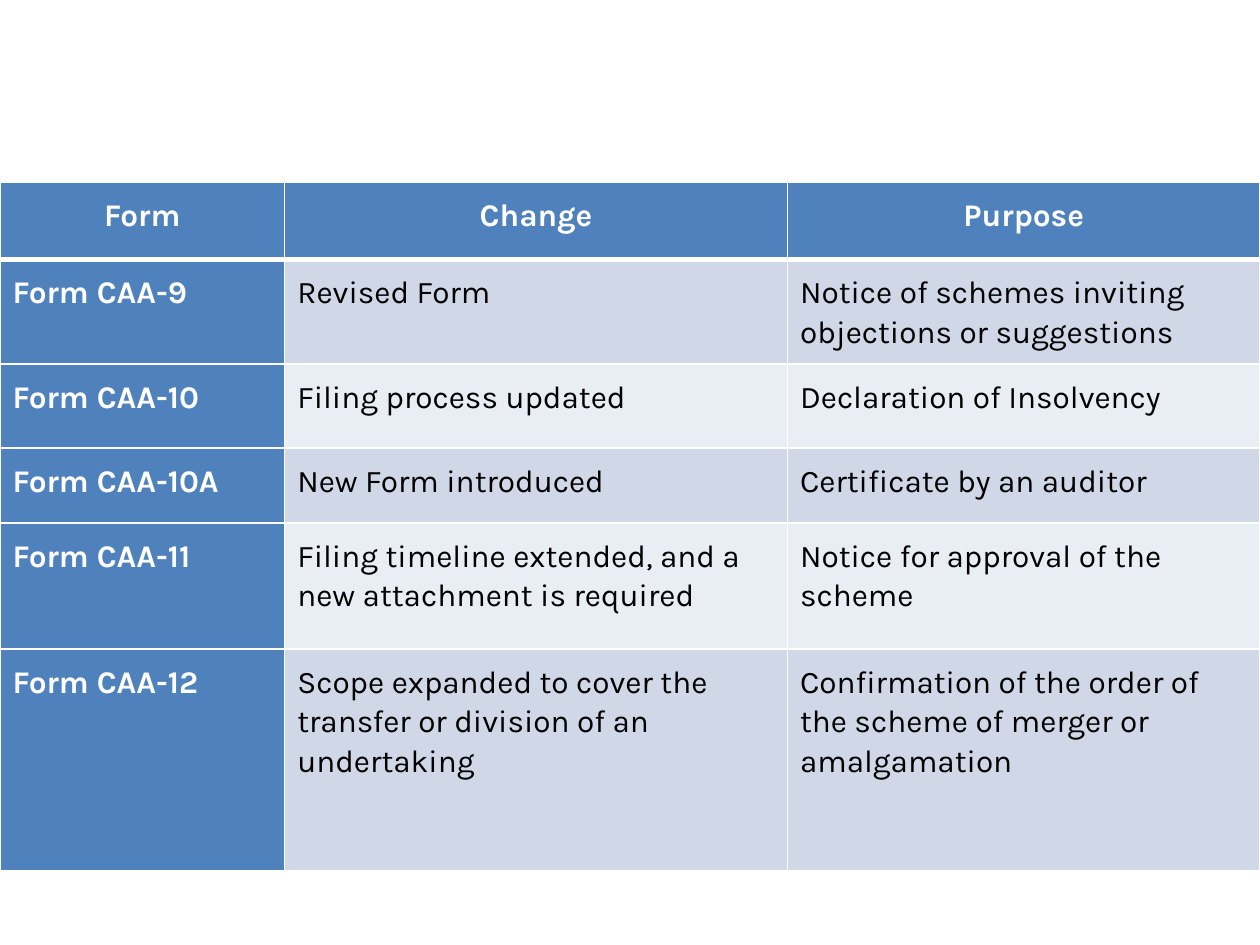
from dataclasses import dataclass

from lxml import etree
from pptx import Presentation
from pptx.dml.color import RGBColor
from pptx.enum import text
from pptx.oxml import ns
from pptx.util import Pt


@dataclass(frozen=True)
class Theme:
    font: str = "Karla"
    size: float = 18
    accent: str = "4F81BD"
    bands: tuple = ("D0D8E8", "E9EDF4")
    light: str = "FFFFFF"
    dark: str = "000000"
    rule: float = 1
    header_rule: float = 3
    inset: float = 7.2


THEME = Theme()
COL_WIDTHS = (162.7, 287.3, 270)
ROW_HEIGHTS = (44, 57, 48, 43, 72, 126.5)
ROWS = (
    ("Form", "Change", "Purpose"),
    ("Form CAA-9", "Revised Form",
     "Notice of schemes inviting objections or suggestions"),
    ("Form CAA-10", "Filing process updated", "Declaration of Insolvency"),
    ("Form CAA-10A", "New Form introduced", "Certificate by an auditor"),
    ("Form CAA-11", "Filing timeline extended, and a new attachment is required",
     "Notice for approval of the scheme"),
    ("Form CAA-12",
     "Scope expanded to cover the transfer or division of an undertaking",
     "Confirmation of the order of the scheme of merger or amalgamation"),
)


def set_borders(cell, widths):
    """Draw the cell's rules; the schema wants them ahead of the fill."""
    tc_pr = cell._tc.get_or_add_tcPr()
    for i, (side, width) in enumerate(widths.items()):
        ln = etree.Element(ns.qn(f"a:ln{side}"), w=str(Pt(width)))
        fill = etree.SubElement(ln, ns.qn("a:solidFill"))
        etree.SubElement(fill, ns.qn("a:srgbClr"), val=THEME.light)
        tc_pr.insert(i, ln)


def fill_cell(cell, words, row, col):
    is_header = row == 0
    is_label = is_header or col == 0
    fill = THEME.accent if is_label else THEME.bands[(row - 1) % 2]
    cell.fill.solid()
    cell.fill.fore_color.rgb = RGBColor.from_string(fill)
    for side in ("left", "right", "top", "bottom"):
        setattr(cell, f"margin_{side}", Pt(THEME.inset))
    set_borders(cell, {
        "L": THEME.rule, "R": THEME.rule,
        "T": THEME.header_rule if row == 1 else THEME.rule,
        "B": THEME.header_rule if is_header else THEME.rule,
    })

    p = cell.text_frame.paragraphs[0]
    align = text.PP_ALIGN.CENTER if is_header else text.PP_ALIGN.LEFT
    layout = {"alignment": align, "line_spacing": 1.07, "space_after": Pt(8)}
    for name, value in layout.items():
        setattr(p, name, value)
    r = p.add_run()
    r.text = words
    look = {"name": THEME.font, "size": Pt(THEME.size), "bold": is_label}
    for name, value in look.items():
        setattr(r.font, name, value)
    r.font.color.rgb = RGBColor.from_string(THEME.light if is_label else THEME.dark)


def add_forms_table(s, left, top, width, height):
    """Place the table, sharing the box out by the column and row sizes."""
    frame = s.shapes.add_table(len(ROWS), len(COL_WIDTHS),
                               Pt(left), Pt(top), Pt(width), Pt(height))
    table = frame.table
    for column, share in zip(table.columns, COL_WIDTHS):
        column.width = Pt(width * share / sum(COL_WIDTHS))
    for row, share in zip(table.rows, ROW_HEIGHTS):
        row.height = Pt(height * share / sum(ROW_HEIGHTS))
    for i, record in enumerate(ROWS):
        for j, words in enumerate(record):
            fill_cell(table.cell(i, j), words, i, j)


def main():
    prs = Presentation()
    prs.slide_width, prs.slide_height = Pt(720), Pt(540)
    s = prs.slides.add_slide(prs.slide_layouts[6])
    add_forms_table(s, 0, 104.4, 720, sum(ROW_HEIGHTS))
    prs.save("out.pptx")


if __name__ == "__main__":
    main()
